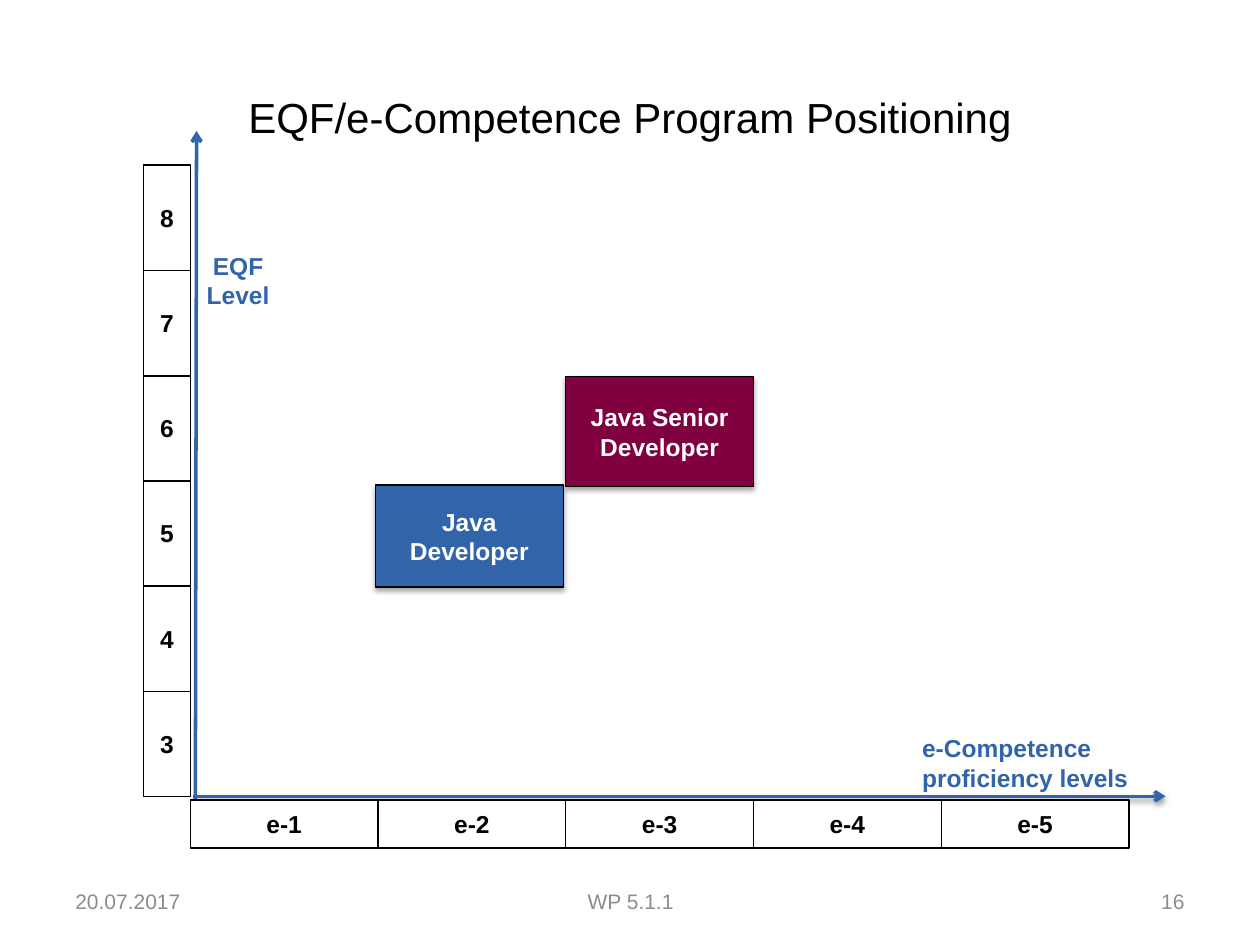
from dataclasses import dataclass

from lxml.etree import SubElement
from pptx import Presentation
from pptx.dml.color import RGBColor
from pptx.enum.shapes import MSO_CONNECTOR, MSO_SHAPE
from pptx.enum.text import MSO_ANCHOR, PP_ALIGN
from pptx.oxml.ns import qn
from pptx.util import Inches, Pt


@dataclass(frozen=True)
class Theme:
    font: str = "Arial"
    black: RGBColor = RGBColor(0x00, 0x00, 0x00)
    white: RGBColor = RGBColor(0xFF, 0xFF, 0xFF)
    blue: RGBColor = RGBColor(0x32, 0x64, 0xAA)
    maroon: RGBColor = RGBColor(0x80, 0x00, 0x40)
    gray: RGBColor = RGBColor(0x8C, 0x8C, 0x8C)
    title_size: int = 24
    label_size: int = 14
    footer_size: int = 12


class SlideBuilder:
    def __init__(self, slide, theme):
        self.slide = slide
        self.theme = theme

    def set_text(self, shape, text, size, color, bold=False, align=PP_ALIGN.CENTER):
        text_frame = shape.text_frame
        text_frame.text = text
        for paragraph in text_frame.paragraphs:
            paragraph.alignment = align
            for run in paragraph.runs:
                run.font.name = self.theme.font
                run.font.size = Pt(size)
                run.font.bold = bold
                run.font.color.rgb = color

    def set_shadow(self, shape, opacity=0):
        """Replace the inherited effects by a soft downward shadow, or by none."""
        effects = SubElement(shape._element.spPr, qn("a:effectLst"))
        if opacity:
            shadow = SubElement(effects, qn("a:outerShdw"), blurRad=str(Pt(3.1)),
                                dist=str(Pt(1.8)), dir="5400000", rotWithShape="0")
            color = SubElement(shadow, qn("a:srgbClr"), val=str(self.theme.black))
            SubElement(color, qn("a:alpha"), val=str(opacity * 1000))

    def title(self, text):
        shape = self.slide.shapes.title
        shape.left, shape.top = Inches(0.5), Inches(0.3)
        shape.width, shape.height = Inches(9), Inches(1.25)
        shape.text_frame.vertical_anchor = MSO_ANCHOR.MIDDLE
        self.set_text(shape, text, self.theme.title_size, self.theme.black)

    def axis(self, start_x, start_y, end_x, end_y, shadow=0):
        connector = self.slide.shapes.add_connector(
            MSO_CONNECTOR.STRAIGHT, Inches(start_x), Inches(start_y),
            Inches(end_x), Inches(end_y))
        connector.line.color.rgb = self.theme.blue
        connector.line.width = Pt(2)
        line = connector._element.spPr.find(qn("a:ln"))
        SubElement(line, qn("a:tailEnd"), type="arrow")
        self.set_shadow(connector, shadow)

    def box(self, text, left, top, width, height, fill, color, shadow=0):
        shape = self.slide.shapes.add_shape(
            MSO_SHAPE.RECTANGLE, Inches(left), Inches(top),
            Inches(width), Inches(height))
        shape.fill.solid()
        shape.fill.fore_color.rgb = fill
        shape.line.color.rgb = self.theme.black
        shape.line.width = Pt(0.75)
        self.set_shadow(shape, shadow)
        shape.text_frame.word_wrap = True
        shape.text_frame.vertical_anchor = MSO_ANCHOR.MIDDLE
        self.set_text(shape, text, self.theme.label_size, color, bold=True)

    def level(self, text, left, top, width, height):
        self.box(text, left, top, width, height, self.theme.white, self.theme.black)

    def program(self, text, left, top, height, fill):
        self.box(text, left, top, 1.49, height, fill, self.theme.white, shadow=35)

    def text_box(self, left, top, width, height, wrap=True, anchor=MSO_ANCHOR.TOP):
        shape = self.slide.shapes.add_textbox(
            Inches(left), Inches(top), Inches(width), Inches(height))
        shape.text_frame.word_wrap = wrap
        shape.text_frame.vertical_anchor = anchor
        return shape

    def axis_label(self, text, left, top, width, align, wrap=True):
        shape = self.text_box(left, top, width, 0.57, wrap)
        self.set_text(shape, text, self.theme.label_size, self.theme.blue, True, align)

    def footer(self, text, left, width, align):
        shape = self.text_box(left, 6.95, width, 0.4, anchor=MSO_ANCHOR.MIDDLE)
        self.set_text(shape, text, self.theme.footer_size, self.theme.gray, align=align)


def main():
    presentation = Presentation()
    presentation.slide_width = Inches(10)
    presentation.slide_height = Inches(7.5)
    theme = Theme()
    title_only = presentation.slide_layouts[5]
    builder = SlideBuilder(presentation.slides.add_slide(title_only), theme)

    builder.title("EQF/e-Competence Program Positioning")
    builder.axis(1.55, 6.63, 1.56, 1.04)
    builder.axis(1.53, 6.32, 9.25, 6.32, shadow=38)

    first_top, last_top = 5.48, 1.31
    row_step = (first_top - last_top) / 5
    for row in range(6):
        builder.level(str(row + 3), 1.14, first_top - row * row_step, 0.37, 0.84)

    builder.axis_label("EQF\nLevel", 1.54, 1.94, 0.7, PP_ALIGN.CENTER, wrap=False)
    builder.axis_label("e-Competence\nproficiency levels", 7.22, 5.77, 2.03,
                       PP_ALIGN.LEFT)

    column_width = 1.49
    for column in range(5):
        builder.level(f"e-{column + 1}", 1.51 + column * column_width, 6.35,
                      column_width, 0.38)

    builder.program("Java Developer", 2.98, 3.85, 0.81, theme.blue)
    builder.program("Java Senior Developer", 4.49, 2.99, 0.87, theme.maroon)

    builder.footer("20.07.2017", 0.5, 2.33, PP_ALIGN.LEFT)
    builder.footer("WP 5.1.1", 3.42, 3.17, PP_ALIGN.CENTER)
    builder.footer("16", 7.17, 2.33, PP_ALIGN.RIGHT)

    presentation.save("out.pptx")


if __name__ == "__main__":
    main()
